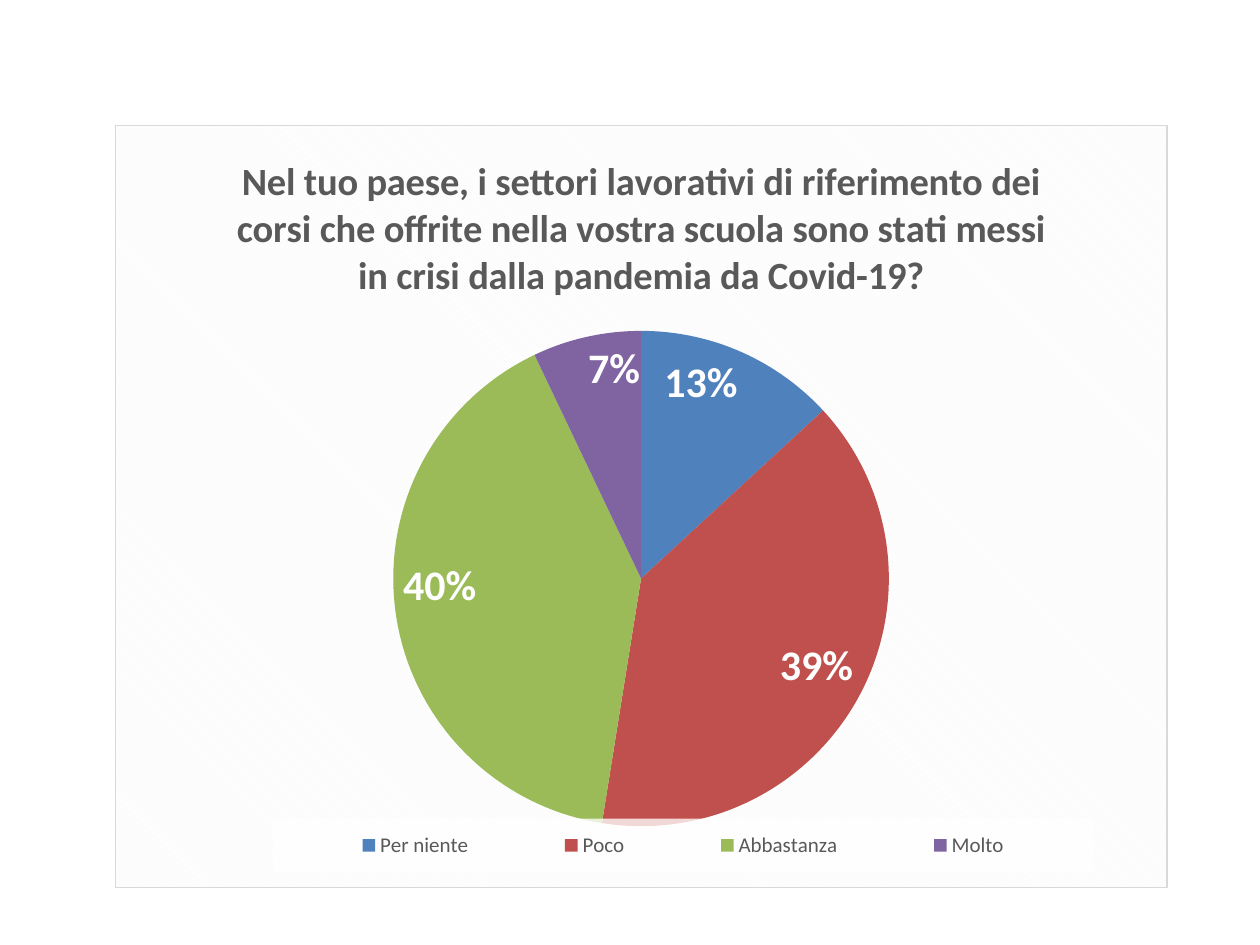
from lxml import etree
from pptx import Presentation
from pptx.chart.data import CategoryChartData
from pptx.dml.color import RGBColor
from pptx.enum.chart import XL_CHART_TYPE, XL_LABEL_POSITION, XL_LEGEND_POSITION
from pptx.oxml import parse_xml
from pptx.oxml.ns import nsdecls, qn
from pptx.util import Cm, Pt

COLORS = {
    "text": "595959",
    "label": "FFFFFF",
    "border": "D9D9D9",
    "hatch": "F2F2F2",
    "paper": "FFFFFF",
}
ANSWERS = {
    "Per niente": (13, "4F81BD"),
    "Poco": (39, "C0504D"),
    "Abbastanza": (40, "9BBB59"),
    "Molto": (7, "8064A2"),
}
QUESTION = (
    "Nel tuo paese, i settori lavorativi di riferimento dei corsi che offrite "
    "nella vostra scuola sono stati messi in crisi dalla pandemia da Covid-19?"
)


def set_layout(parent, index, target, x, y, w, h):
    for old in parent.findall(qn("c:layout")):
        parent.remove(old)
    layout = parse_xml(f"<c:layout {nsdecls('c')}><c:manualLayout/></c:layout>")
    settings = {"xMode": "edge", "yMode": "edge", "x": x, "y": y, "w": w, "h": h}
    if target:
        settings = {"layoutTarget": target} | settings
    for name, value in settings.items():
        etree.SubElement(layout[0], qn(f"c:{name}")).set("val", str(value))
    parent.insert(index, layout)


def style_font(font, size, color, bold):
    font.name = "Calibri"
    font.size = Pt(size)
    font.bold = bold
    font.color.rgb = RGBColor.from_string(COLORS[color])


deck = Presentation()
deck.slide_width = Cm(25.4)
deck.slide_height = Cm(19.05)
page = deck.slides.add_slide(deck.slide_layouts[6])

data = CategoryChartData()
data.categories = list(ANSWERS)
data.add_series("Series 1", [value for value, color in ANSWERS.values()])
chart = page.shapes.add_chart(
    XL_CHART_TYPE.PIE, Cm(2.31), Cm(2.51), Cm(21.23), Cm(15.39), data
).chart
chart.font.name = "Calibri"
chart.font.size = Pt(10)

chart.has_title = True
frame = chart.chart_title.text_frame
frame.text = QUESTION
style_font(frame.paragraphs[0].runs[0].font, 22, "text", True)

plot = chart.plots[0]
plot.vary_by_categories = True
for index, (value, color) in enumerate(ANSWERS.values()):
    fill = plot.series[0].points[index].format.fill
    fill.solid()
    fill.fore_color.rgb = RGBColor.from_string(color)

labels = plot.series[0].data_labels
labels.show_percentage = True
labels.show_value = False
labels.number_format = "0%"
labels.number_format_is_linked = False
labels.position = XL_LABEL_POSITION.INSIDE_END
style_font(labels.font, 24, "label", True)

chart.has_legend = True
legend = chart.legend
legend.position = XL_LEGEND_POSITION.BOTTOM
legend.include_in_layout = False
style_font(legend.font, 12, "text", False)

chart_space = chart.element
plot_area = chart_space.find(".//" + qn("c:plotArea"))
legend_element = chart_space.find(".//" + qn("c:legend"))
set_layout(plot_area, 0, "inner", 0.26, 0.27, 0.48, 0.65)
set_layout(legend_element, 1, None, 0.15, 0.91, 0.78, 0.07)

legend_element.find(qn("c:txPr")).addprevious(parse_xml(
    f"<c:spPr {nsdecls('c', 'a')}><a:solidFill><a:srgbClr val='{COLORS['paper']}'>"
    "<a:alpha val='78000'/></a:srgbClr></a:solidFill></c:spPr>"
))
chart_space.find(qn("c:chart")).addnext(parse_xml(
    f"<c:spPr {nsdecls('c', 'a')}><a:pattFill prst='dkDnDiag'>"
    f"<a:fgClr><a:srgbClr val='{COLORS['hatch']}'/></a:fgClr>"
    f"<a:bgClr><a:srgbClr val='{COLORS['paper']}'/></a:bgClr></a:pattFill>"
    f"<a:ln w='{Pt(0.75)}'><a:solidFill><a:srgbClr val='{COLORS['border']}'/>"
    "</a:solidFill></a:ln></c:spPr>"
))

deck.save("out.pptx")
